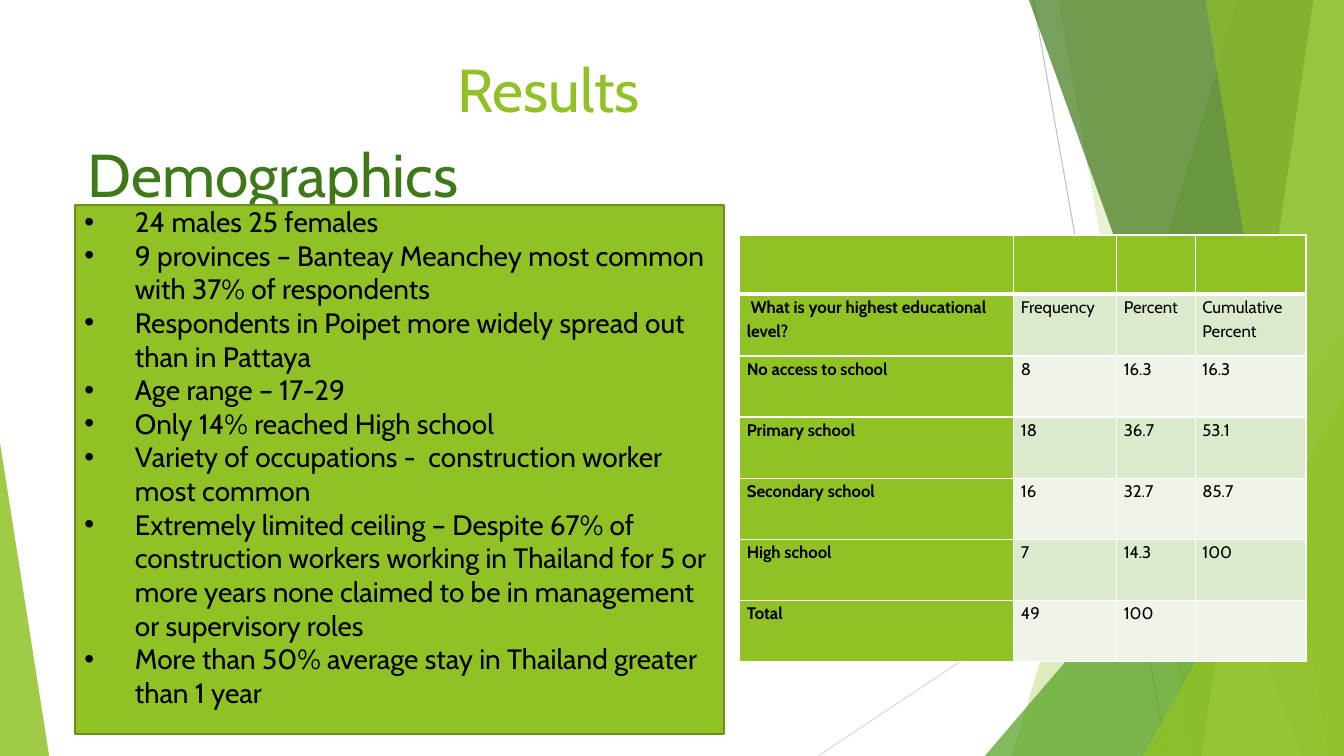
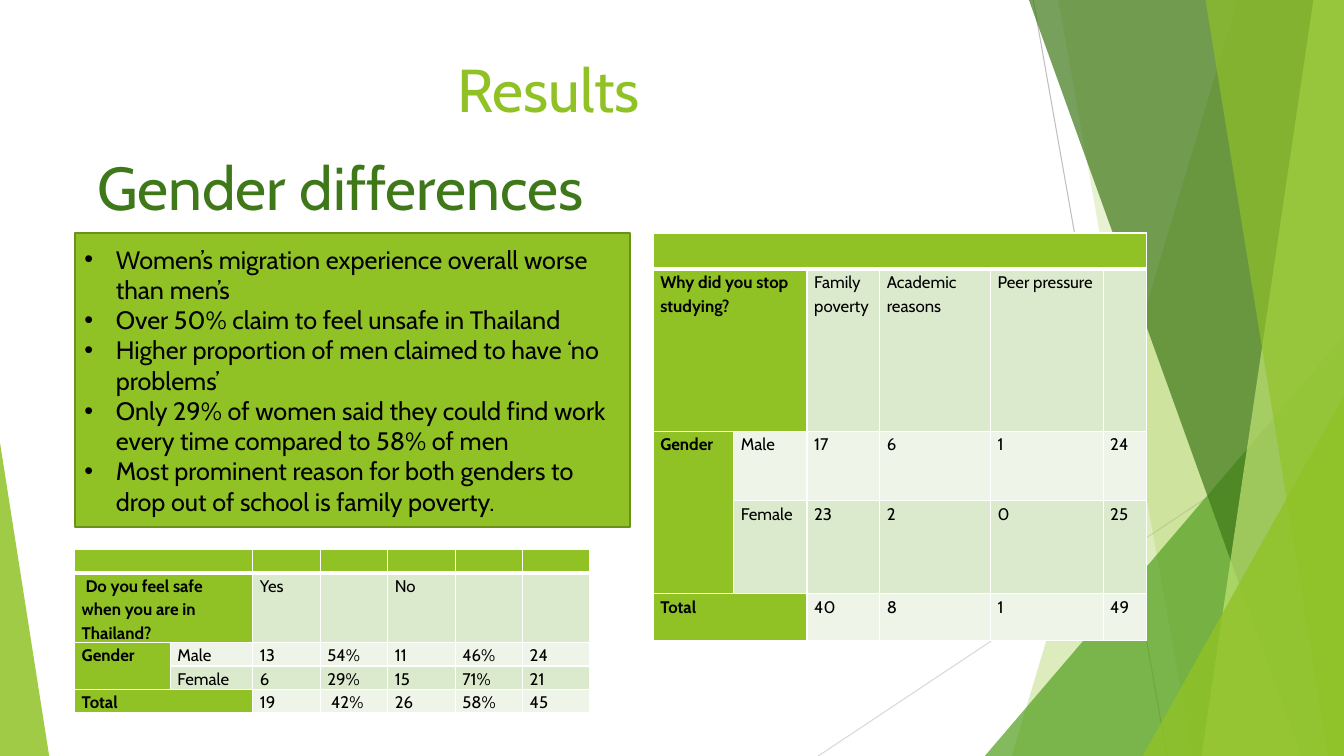
"""Build two slides of survey results with bulleted panels and tables."""
from dataclasses import dataclass
from typing import Any

import lxml.etree
import pptx
import pptx.dml.color
import pptx.enum.shapes
import pptx.enum.text
import pptx.oxml.ns
import pptx.util

Cm = pptx.util.Cm
Pt = pptx.util.Pt
qn = pptx.oxml.ns.qn

WIDTH, HEIGHT = 33.87, 19.05
FONT = "Cabin"
LIME, GREEN, FOREST, PALE = "90C226", "54A021", "3F7819", "C0E474"
OUTLINE, BLACK, WHITE = "6B901C", "000000", "FFFFFF"
ROW_FILLS = ("EEF4E8", "DBE9CD")
ANCHOR = pptx.enum.text.MSO_ANCHOR
CELL_FORMAT = {"margin_left": Cm(0.18), "margin_right": Cm(0.18),
               "margin_top": 0, "margin_bottom": 0}


@dataclass(frozen=True)
class Ray:
    """A thin straight line behind the bands."""
    x1: float
    y1: float
    x2: float
    y2: float
    color: str


@dataclass(frozen=True)
class Band:
    """A full-height band that reaches the right edge."""
    top_x: float
    bottom_x: float
    color: str
    opacity: int


@dataclass(frozen=True)
class Corner:
    """A right triangle standing in a bottom corner."""
    width: float
    height: float
    at_right: bool
    color: str
    opacity: int


@dataclass(frozen=True)
class Heading:
    """A centred line of large text."""
    text: str
    left: float
    top: float
    width: float
    color: str


@dataclass(frozen=True)
class Panel:
    """A filled rectangle with a bulleted list."""
    left: float
    top: float
    width: float
    height: float
    size: int
    indent: float
    bottom_inset: float
    items: list[str]


@dataclass(frozen=True)
class Table:
    """A table with a coloured top row and first column."""
    left: float
    top: float
    cols: list[float]
    rows: list[float]
    cells: list[list[str]]
    merges: tuple[tuple[int, int, int, int], ...] = ()


@dataclass(frozen=True)
class Page:
    """The content of one slide."""
    heading: Heading
    panel: Panel
    tables: list[Table]


RAYS = [Ray(26.04, 0, 29.41, HEIGHT, "BFBFBF"),
        Ray(WIDTH, 10.24, 20.62, HEIGHT, "D9D9D9")]
BACKDROP = [
    Band(31.19, 25.5, LIME, 30),
    Band(26.67, 30.05, LIME, 20),
    Corner(9.05, 10.59, True, GREEN, 72),
    Band(25.93, 32.79, FOREST, 70),
    Band(33.1, 30.28, PALE, 70),
    Band(30.38, 33.48, LIME, 65),
    Corner(5.07, 9.07, True, LIME, 80),
    Corner(1.24, 7.9, False, LIME, 85),
]
TITLE = Heading("Results", 1.88, 1.19, 23.88, LIME)

PAGES = [
    Page(
        Heading("Demographics", 1.28, 3.33, 11.2, FOREST),
        Panel(1.88, 5.16, 16.36, 13.34, 20, 1.27, 0.64, [
            "24 males 25 females",
            "9 provinces – Banteay Meanchey most common with 37% of respondents",
            "Respondents in Poipet more widely spread out than in Pattaya",
            "Age range – 17-29",
            "Only 14% reached High school",
            "Variety of occupations -  construction worker most common",
            "Extremely limited ceiling – Despite 67% of construction workers working in "
            "Thailand for 5 or more years none claimed to be in management or supervisory roles",
            "More than 50% average stay in Thailand greater than 1 year",
        ]),
        [Table(18.64, 5.92, [6.91, 2.59, 1.98, 2.79], [1.49, 1.56] + [1.54] * 5, [
            ["", "", "", ""],
            [" What is your highest educational level?", "Frequency", "Percent",
             "Cumulative Percent"],
            ["No access to school", "8", "16.3", "16.3"],
            ["Primary school", "18", "36.7", "53.1"],
            ["Secondary school", "16", "32.7", "85.7"],
            ["High school", "7", "14.3", "100"],
            ["Total", "49", "100", ""],
        ])],
    ),
    Page(
        Heading("Gender differences", 0.97, 3.66, 15.21, FOREST),
        Panel(1.88, 5.87, 14, 7.42, 18, 0.79, 0, [
            "Women’s migration experience overall worse than men’s",
            "Over 50% claim to feel unsafe in Thailand",
            "Higher proportion of men claimed to have ‘no problems’",
            "Only 29% of women said they could find work every time compared to 58% of men",
            "Most prominent reason for both genders to drop out of school is family poverty.",
        ]),
        [
            Table(1.88, 13.84, [2.41, 2.08] + [1.7] * 5, [0.59, 1.76] + [0.59] * 3, [
                ["", "", "", "", "", "", ""],
                [" Do you feel safe when you are in Thailand?", "", "Yes", "", "No", "", ""],
                ["Gender", "Male", "13", "54%", "11", "46%", "24"],
                ["", "Female", "6", "29%", "15", "71%", "21"],
                ["Total", "", "19", " 42%", "26", "58% ", "45"],
            ], ((0, 0, 0, 1), (1, 0, 1, 1), (2, 0, 3, 0), (4, 0, 4, 1))),
            Table(16.46, 5.87, [2.03, 1.85, 1.83, 2.79, 2.84, 1.09],
                  [0.91, 4.09, 1.75, 2.34, 1.17], [
                ["", "", "", "", "", ""],
                ["Why did you stop studying?", "", "Family poverty", "Academic reasons",
                 "Peer pressure", ""],
                ["Gender", "Male", "17", "6", "1", "24"],
                ["", "Female", "23", "2", "0", "25"],
                ["Total", "", "40", "8", "1", "49"],
            ], ((0, 0, 0, 5), (1, 0, 1, 1), (2, 0, 3, 0), (4, 0, 4, 1))),
        ],
    ),
]


def rgb(color: str) -> pptx.dml.color.RGBColor:
    """Turn a hex string into a colour."""
    return pptx.dml.color.RGBColor.from_string(color)


def apply(obj: Any, values: dict[str, Any]) -> None:
    """Set every named attribute on an object."""
    for name, value in values.items():
        setattr(obj, name, value)


def write(p: Any, text: str, size: float, color: str, bold: bool = False) -> None:
    """Add one formatted run to a paragraph."""
    r = p.add_run()
    r.text = text
    apply(r.font, {"name": FONT, "size": Pt(size), "bold": bold})
    r.font.color.rgb = rgb(color)


def paint(sp: Any, color: str, opacity: int = 100) -> None:
    """Give a shape a flat fill without line or shadow."""
    sp.shadow.inherit = False
    sp.fill.solid()
    sp.fill.fore_color.rgb = rgb(color)
    sp.line.fill.background()
    if opacity < 100:
        clr = sp._element.spPr.find(qn("a:solidFill"))[0]
        lxml.etree.SubElement(clr, qn("a:alpha"), val=str(opacity * 1000))


def draw_ray(slide: Any, ray: Ray) -> None:
    """Draw a thin line."""
    cxn = slide.shapes.add_connector(
        pptx.enum.shapes.MSO_CONNECTOR.STRAIGHT,
        Cm(ray.x1), Cm(ray.y1), Cm(ray.x2), Cm(ray.y2))
    cxn.line.color.rgb = rgb(ray.color)
    cxn.line.width = Pt(0.75)
    lxml.etree.SubElement(cxn._element.spPr, qn("a:effectLst"))


def draw_band(slide: Any, band: Band) -> None:
    """Draw a slanted band to the right edge."""
    fb = slide.shapes.build_freeform(Cm(band.top_x), 0)
    fb.add_line_segments([(Cm(WIDTH), 0), (Cm(WIDTH), Cm(HEIGHT)),
                          (Cm(band.bottom_x), Cm(HEIGHT))])
    paint(fb.convert_to_shape(), band.color, band.opacity)


def draw_corner(slide: Any, corner: Corner) -> None:
    """Draw a right triangle in a bottom corner."""
    left = WIDTH - corner.width if corner.at_right else 0
    sp = slide.shapes.add_shape(
        pptx.enum.shapes.MSO_SHAPE.ISOSCELES_TRIANGLE,
        Cm(left), Cm(HEIGHT - corner.height), Cm(corner.width), Cm(corner.height))
    sp.adjustments[0] = 1.0 if corner.at_right else 0.0
    paint(sp, corner.color, corner.opacity)


def draw_backdrop(slide: Any) -> None:
    """Draw the lines, bands and triangles that every slide has."""
    for ray in RAYS:
        draw_ray(slide, ray)
    for item in BACKDROP:
        if isinstance(item, Band):
            draw_band(slide, item)
        else:
            draw_corner(slide, item)


def draw_heading(slide: Any, heading: Heading) -> None:
    """Draw a centred heading."""
    tf = slide.shapes.add_textbox(Cm(heading.left), Cm(heading.top),
                                  Cm(heading.width), Cm(2.1)).text_frame
    tf.word_wrap = True
    p = tf.paragraphs[0]
    p.alignment = pptx.enum.text.PP_ALIGN.CENTER
    write(p, heading.text, 43.2, heading.color)


def draw_panel(slide: Any, panel: Panel) -> None:
    """Draw a rectangle with bulleted text."""
    sp = slide.shapes.add_shape(
        pptx.enum.shapes.MSO_SHAPE.RECTANGLE,
        Cm(panel.left), Cm(panel.top), Cm(panel.width), Cm(panel.height))
    paint(sp, LIME)
    sp.line.color.rgb = rgb(OUTLINE)
    sp.line.width = Pt(1.5)
    tf = sp.text_frame
    apply(tf, {"word_wrap": True, "vertical_anchor": ANCHOR.MIDDLE,
               "margin_top": 0, "margin_bottom": Cm(panel.bottom_inset)})
    for i, item in enumerate(panel.items):
        p = tf.add_paragraph() if i else tf.paragraphs[0]
        p.alignment = pptx.enum.text.PP_ALIGN.LEFT
        pPr = p._p.get_or_add_pPr()
        pPr.set("marL", str(Cm(panel.indent)))
        pPr.set("indent", str(-Cm(panel.indent)))
        lxml.etree.SubElement(pPr, qn("a:buFont"), typeface="Arial")
        lxml.etree.SubElement(pPr, qn("a:buChar"), char="•")
        write(p, item, panel.size, BLACK)


def draw_borders(cell: Any, bottom: float) -> None:
    """Give a cell white borders."""
    tcPr = cell._tc.get_or_add_tcPr()
    for side, width in {"L": 1, "R": 1, "T": 1, "B": bottom}.items():
        ln = lxml.etree.SubElement(tcPr, qn(f"a:ln{side}"), w=str(Pt(width)))
        fill = lxml.etree.SubElement(ln, qn("a:solidFill"))
        lxml.etree.SubElement(fill, qn("a:srgbClr"), val=WHITE)


def draw_table(slide: Any, table: Table) -> None:
    """Draw a table with its merged cells."""
    tbl = slide.shapes.add_table(
        len(table.rows), len(table.cols), Cm(table.left), Cm(table.top),
        Cm(sum(table.cols)), Cm(sum(table.rows))).table
    for col, width in zip(tbl.columns, table.cols):
        col.width = Cm(width)
    for row, height in zip(tbl.rows, table.rows):
        row.height = Cm(height)
    for i, texts in enumerate(table.cells):
        for j, text in enumerate(texts):
            cell = tbl.cell(i, j)
            apply(cell, CELL_FORMAT)
            draw_borders(cell, 1 if i else 3)
            cell.fill.solid()
            cell.fill.fore_color.rgb = rgb(ROW_FILLS[i % 2] if i and j else LIME)
            p = cell.text_frame.paragraphs[0]
            p.line_spacing = 1.15
            if text:
                write(p, text, 12, BLACK, bold=j == 0)
            else:
                p._p.get_or_add_endParaRPr().set("sz", "1200")
    for top, left, bottom, right in table.merges:
        tbl.cell(top, left).merge(tbl.cell(bottom, right))


def main() -> None:
    """Build and save the presentation."""
    prs = pptx.Presentation()
    apply(prs, {"slide_width": Cm(WIDTH), "slide_height": Cm(HEIGHT)})
    for page in PAGES:
        slide = prs.slides.add_slide(prs.slide_layouts[6])
        draw_backdrop(slide)
        draw_heading(slide, TITLE)
        draw_heading(slide, page.heading)
        draw_panel(slide, page.panel)
        for table in page.tables:
            draw_table(slide, table)
    prs.save("out.pptx")


if __name__ == "__main__":
    main()
